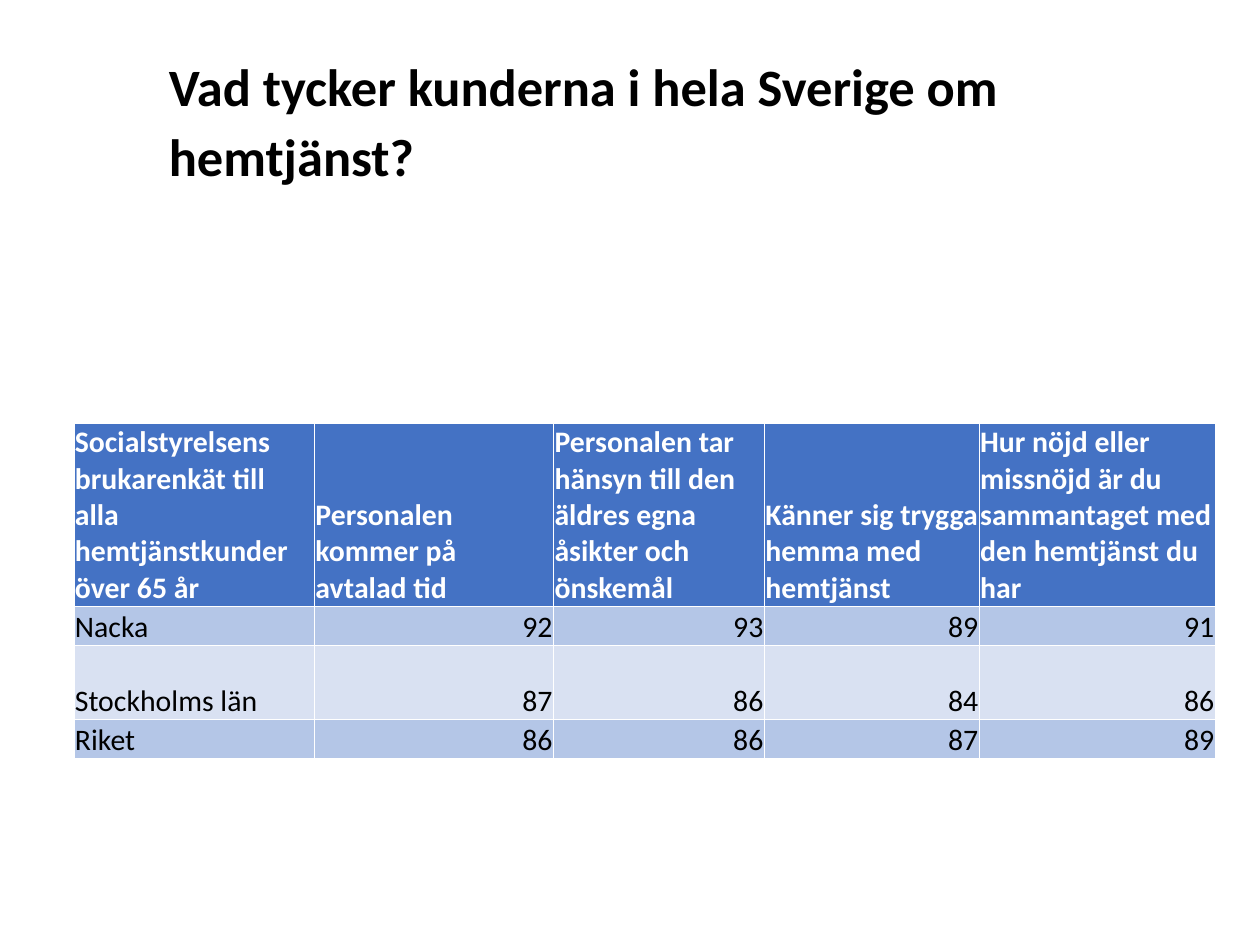
from dataclasses import dataclass

from lxml import etree
from pptx import Presentation
from pptx.dml.color import RGBColor
from pptx.enum import text as t
from pptx.oxml import ns
from pptx.util import Cm, Pt


@dataclass(frozen=True)
class Theme:
    """Colours, font and type sizes of the slide."""
    font: str = "Calibri"
    dark: str = "000000"
    light: str = "FFFFFF"
    head: str = "4472C4"
    odd: str = "B4C6E7"
    even: str = "D9E1F2"
    title: int = 30
    body: int = 17
    rule: float = 0.5


THEME = Theme()
COLS = (4.85, 4.82, 4.25, 4.33, 4.76)
ROWS = (3.69, 0.79, 1.49, 0.79)
DATA = (
    ("Socialstyrelsens brukarenkät till alla hemtjänstkunder över 65 år",
     "Personalen kommer på avtalad tid",
     "Personalen tar hänsyn till den äldres egna åsikter och önskemål",
     "Känner sig trygga hemma med hemtjänst",
     "Hur nöjd eller missnöjd är du sammantaget med den hemtjänst du har"),
    ("Nacka", 92, 93, 89, 91),
    ("Stockholms län", 87, 86, 84, 86),
    ("Riket", 86, 86, 87, 89),
)


def write(frame, words, size=THEME.body, color=THEME.dark, bold=False,
          align=t.PP_ALIGN.LEFT, lead=None):
    """Write one formatted paragraph into a text frame."""
    para = frame.paragraphs[0]
    para.alignment = align
    if lead:
        para.line_spacing = Pt(lead)
    run = para.add_run()
    run.text = str(words)
    font = run.font
    font.name, font.size, font.bold = THEME.font, Pt(size), bold
    font.color.rgb = RGBColor.from_string(color)


def edge(cell, sides):
    """Rule the given sides of a cell, named in the order L, R, T, B."""
    props = cell._tc.get_or_add_tcPr()
    for side in sides:
        line = etree.SubElement(props, ns.qn(f"a:ln{side}"), w=str(Pt(THEME.rule)))
        fill = etree.SubElement(line, ns.qn("a:solidFill"))
        etree.SubElement(fill, ns.qn("a:srgbClr"), val=THEME.light)


def heading(slide, left, top, width, height):
    """Place and format the slide title."""
    title = slide.shapes.title
    title.left, title.top = Cm(left), Cm(top)
    title.width, title.height = Cm(width), Cm(height)
    frame = title.text_frame
    frame.word_wrap = True
    frame.auto_size = t.MSO_AUTO_SIZE.NONE
    frame.vertical_anchor = t.MSO_ANCHOR.MIDDLE
    write(frame, "Vad tycker kunderna i hela Sverige om hemtjänst?",
          size=THEME.title, bold=True, lead=40)


def survey(slide, left, top):
    """Build the survey table with its top left corner at the given place."""
    table = slide.shapes.add_table(len(ROWS), len(COLS), Cm(left), Cm(top),
                                   Cm(sum(COLS)), Cm(sum(ROWS))).table
    for col, width in zip(table.columns, COLS):
        col.width = Cm(width)
    for row, height in zip(table.rows, ROWS):
        row.height = Cm(height)
    for r, line in enumerate(DATA):
        shade = THEME.head if r == 0 else THEME.odd if r % 2 else THEME.even
        for c, value in enumerate(line):
            cell = table.cell(r, c)
            inner = {"L": c > 0, "R": c < len(COLS) - 1,
                     "T": r > 0, "B": r < len(ROWS) - 1}
            edge(cell, [side for side, show in inner.items() if show])
            cell.fill.solid()
            cell.fill.fore_color.rgb = RGBColor.from_string(shade)
            cell.margin_left = cell.margin_right = cell.margin_top = Cm(0.02)
            cell.margin_bottom = 0
            cell.vertical_anchor = t.MSO_ANCHOR.BOTTOM
            write(cell.text_frame, value, bold=r == 0,
                  color=THEME.dark if r else THEME.light,
                  align=t.PP_ALIGN.RIGHT if r and c else t.PP_ALIGN.LEFT)


def main():
    """Build and save the slide."""
    deck = Presentation()
    deck.slide_width, deck.slide_height = Cm(25.4), Cm(19.05)
    slide = deck.slides.add_slide(deck.slide_layouts[5])
    heading(slide, 3.15, 0.76, 21.56, 3.18)
    survey(slide, 1.49, 8.53)
    deck.save("out.pptx")


if __name__ == "__main__":
    main()
